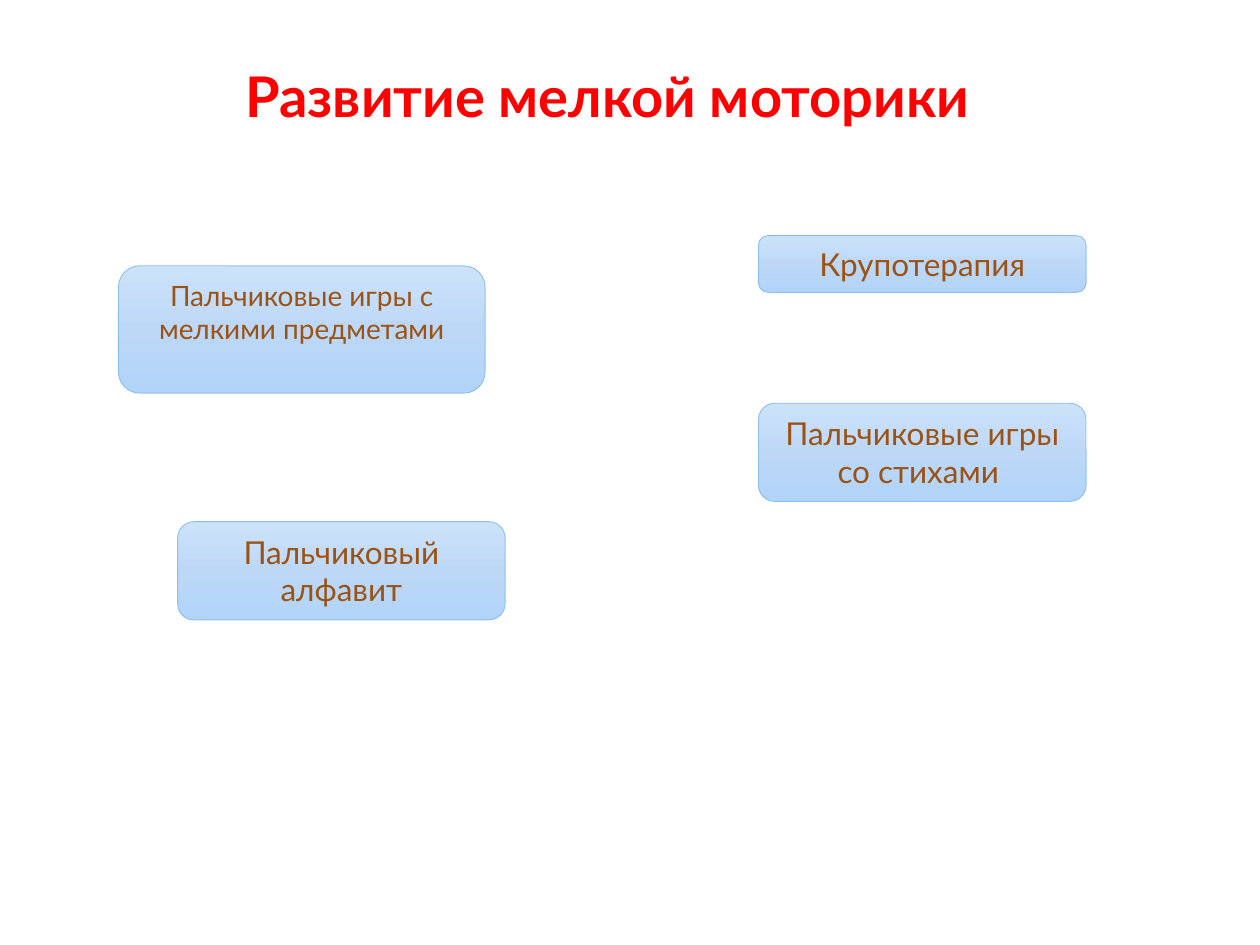
from copy import deepcopy
from pptx import Presentation
from pptx.dml.color import RGBColor
from pptx.enum.shapes import MSO_SHAPE
from pptx.enum.text import MSO_ANCHOR, PP_ALIGN
from pptx.util import Inches, Pt

HUES = {"title": "FF0000", "text": "9A5315", "line": "8BBEF1",
        "top": "CCE2FA", "mid": "BDD8F7", "base": "B2D4F9"}

deck = Presentation()
deck.slide_width, deck.slide_height = Inches(10), Inches(7.5)
slide = deck.slides.add_slide(deck.slide_layouts[6])


def write(frame, text, size, hue):
    frame.word_wrap = True
    frame.vertical_anchor = MSO_ANCHOR.TOP
    para = frame.paragraphs[0]
    para.text = text
    para.font.name, para.font.size = "Lato", Pt(size)
    para.font.color.rgb = RGBColor.from_string(HUES[hue])
    return para


# Title
title = slide.shapes.add_textbox(Inches(1.85), Inches(0.44), Inches(7.11), Inches(2.26))
write(title.text_frame, "Развитие мелкой моторики", 32, "title").font.bold = True

# Cards: left, top, width, height, text size, wording
wide, tall, right = 2.6, 0.78, 6.02
cards = [
    (1.41, 4.14, wide, tall, 18, "Пальчиковый алфавит"),
    (right, 3.2, wide, tall, 18, "Пальчиковые игры со стихами "),
    (0.94, 2.11, 2.91, 1.01, 16, "Пальчиковые игры с мелкими предметами"),
    (right, 1.87, wide, 0.45, 18, "Крупотерапия"),
]
for *place, size, text in cards:
    card = slide.shapes.add_shape(MSO_SHAPE.ROUNDED_RECTANGLE, *map(Inches, place))
    card.shadow.inherit = False
    card.line.color.rgb = RGBColor.from_string(HUES["line"])
    card.line.width = Pt(0.5)

    # Three-stop fill, running downwards
    card.fill.gradient()
    card.fill.gradient_angle = 270
    first = card._element.spPr.find(".//{*}gs")
    first.addnext(deepcopy(first))
    for stop, hue, spot in zip(card.fill.gradient_stops, ("top", "mid", "base"), (0, 0.5, 1)):
        stop.color.rgb = RGBColor.from_string(HUES[hue])
        stop.position = spot

    write(card.text_frame, text, size, "text").alignment = PP_ALIGN.CENTER

deck.save("out.pptx")
